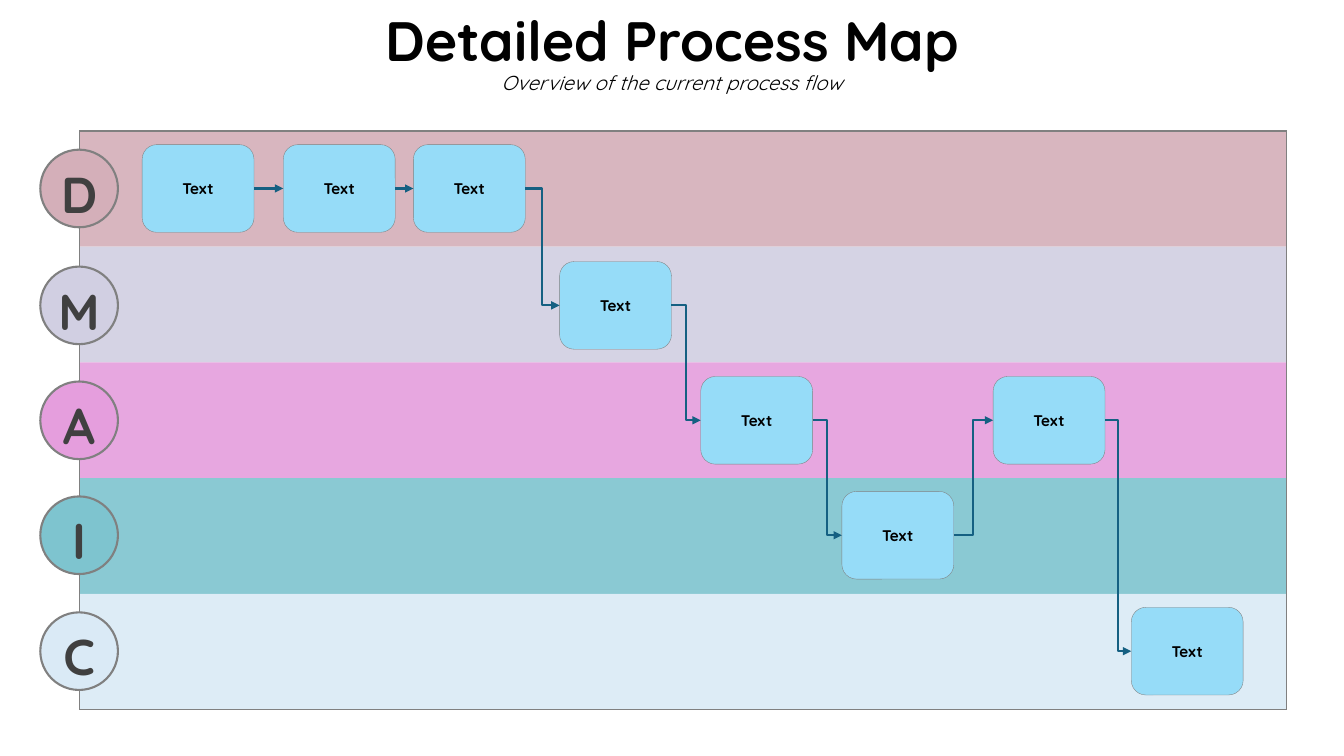
from itertools import pairwise
from lxml.etree import SubElement
from pptx import Presentation
from pptx.dml.color import RGBColor
from pptx.enum.shapes import MSO_CONNECTOR, MSO_SHAPE
from pptx.enum.text import MSO_ANCHOR, PP_ALIGN
from pptx.oxml.ns import qn
from pptx.util import Inches, Pt

FONT = "Quicksand"
BLACK = RGBColor(0x00, 0x00, 0x00)
DARK = RGBColor(0x40, 0x40, 0x40)
GREY = RGBColor(0x80, 0x80, 0x80)
SKY = RGBColor(0x96, 0xDC, 0xF8)
BLUE = RGBColor(0x15, 0x60, 0x82)
ROSE = RGBColor(0xD4, 0xAF, 0xB9)
LILAC = RGBColor(0xD1, 0xCF, 0xE2)
PINK = RGBColor(0xE5, 0x9E, 0xDD)
TEAL = RGBColor(0x7E, 0xC4, 0xCF)
ICE = RGBColor(0xDA, 0xEA, 0xF6)

LANES = {
    "D": (ROSE, 1.87),
    "M": (LILAC, 3.03),
    "A": (PINK, 4.17),
    "I": (TEAL, 5.31),
    "C": (ICE, 6.46),
}
STEPS = [("D", 1.41), ("D", 2.81), ("D", 4.1), ("M", 5.55),
         ("A", 6.95), ("I", 8.35), ("A", 9.85), ("C", 11.22)]
BOX_W, BOX_H, DISC = 1.11, 0.87, 0.77
LEFT, RIGHT = 1, 3


def add_run(para, text, size, color, bold=True, italic=False):
    """Add one formatted run to a paragraph."""
    run = para.add_run()
    run.text = text
    font = run.font
    font.name, font.size = FONT, Pt(size)
    font.bold, font.italic = bold, italic
    font.color.rgb = color


def add_title(slide):
    """Place and fill the title placeholder."""
    title = slide.shapes.title
    title.left, title.top = Inches(3.51), Inches(0)
    title.width, title.height = Inches(6.31), Inches(1.08)
    title.text_frame.vertical_anchor = MSO_ANCHOR.MIDDLE
    para = title.text_frame.paragraphs[0]
    para.alignment, para.line_spacing = PP_ALIGN.CENTER, 0.9
    add_run(para, "Detailed Process Map", 39.6, BLACK)
    para.add_line_break()
    SubElement(para._p.find(qn("a:br")), qn("a:rPr"), sz="3960")
    add_run(para, "Overview of the current process flow", 14.4, BLACK, False, True)


def add_edge(cell, side, shown):
    """Draw or hide one border of a table cell."""
    edge = SubElement(cell._tc.get_or_add_tcPr(), qn(f"a:ln{side}"), w=str(Pt(1)))
    if shown:
        fill = SubElement(edge, qn("a:solidFill"))
        SubElement(fill, qn("a:srgbClr"), val=str(GREY))
    else:
        SubElement(edge, qn("a:noFill"))


def add_lanes(slide):
    """Add the swim lanes as a one-column table."""
    count = len(LANES)
    table = slide.shapes.add_table(count, 1, Inches(0.79), Inches(1.3),
                                   Inches(11.97), Inches(5.74)).table
    table.first_row = table.horz_banding = False
    for row, (color, _) in enumerate(LANES.values()):
        cell = table.cell(row, 0)
        sides = {"L": True, "R": True, "T": row == 0, "B": row == count - 1}
        for side, shown in sides.items():
            add_edge(cell, side, shown)
        cell.fill.solid()
        cell.fill.fore_color.rgb = color
        tint = cell._tc.tcPr.find(qn("a:solidFill")).find(qn("a:srgbClr"))
        SubElement(tint, qn("a:alpha"), val="90000")


def add_node(slide, kind, left, mid, width, height, fill, line):
    """Add a filled, outlined shape centred on a height."""
    node = slide.shapes.add_shape(kind, Inches(left), Inches(mid - height / 2),
                                  Inches(width), Inches(height))
    node.shadow.inherit = False
    node.fill.solid()
    node.fill.fore_color.rgb = fill
    node.line.color.rgb = GREY
    node.line.width = Pt(line)
    node.text_frame.vertical_anchor = MSO_ANCHOR.MIDDLE
    node.text_frame.paragraphs[0].alignment = PP_ALIGN.CENTER
    return node


def add_disc(slide, letter, color, mid):
    """Add the round letter badge of a lane."""
    disc = add_node(slide, MSO_SHAPE.OVAL, 0.4, mid, DISC, DISC, color, 1.5)
    frame = disc.text_frame
    frame.margin_left = frame.margin_right = Inches(0)
    frame.margin_top = frame.margin_bottom = Inches(0)
    frame.paragraphs[0].line_spacing = 1.15
    add_run(frame.paragraphs[0], letter, 36, DARK)


def add_step(slide, lane, left):
    """Add a process step in its lane."""
    mid = LANES[lane][1]
    step = add_node(slide, MSO_SHAPE.ROUNDED_RECTANGLE, left, mid,
                    BOX_W, BOX_H, SKY, 0.25)
    add_run(step.text_frame.paragraphs[0], "Text", 11, BLACK)
    return step


def add_arrow(slide, start, end):
    """Join two steps with an arrow, bent between lanes."""
    level = start.top == end.top
    kind = MSO_CONNECTOR.STRAIGHT if level else MSO_CONNECTOR.ELBOW
    arrow = slide.shapes.add_connector(kind, 0, 0, 0, 0)
    arrow.begin_connect(start, RIGHT)
    arrow.end_connect(end, LEFT)
    arrow.line.color.rgb = BLUE
    arrow.line.width = Pt(1.5)
    SubElement(arrow.line._get_or_add_ln(), qn("a:tailEnd"), type="triangle")
    SubElement(arrow._element.spPr, qn("a:effectLst"))


def main():
    """Build the process map slide."""
    deck = Presentation()
    deck.slide_width, deck.slide_height = Inches(13.33), Inches(7.5)
    slide = deck.slides.add_slide(deck.slide_layouts[5])
    add_title(slide)
    add_lanes(slide)
    for letter, (color, mid) in LANES.items():
        add_disc(slide, letter, color, mid)
    steps = [add_step(slide, lane, left) for lane, left in STEPS]
    for start, end in pairwise(steps):
        add_arrow(slide, start, end)
    deck.save("out.pptx")


if __name__ == "__main__":
    main()
